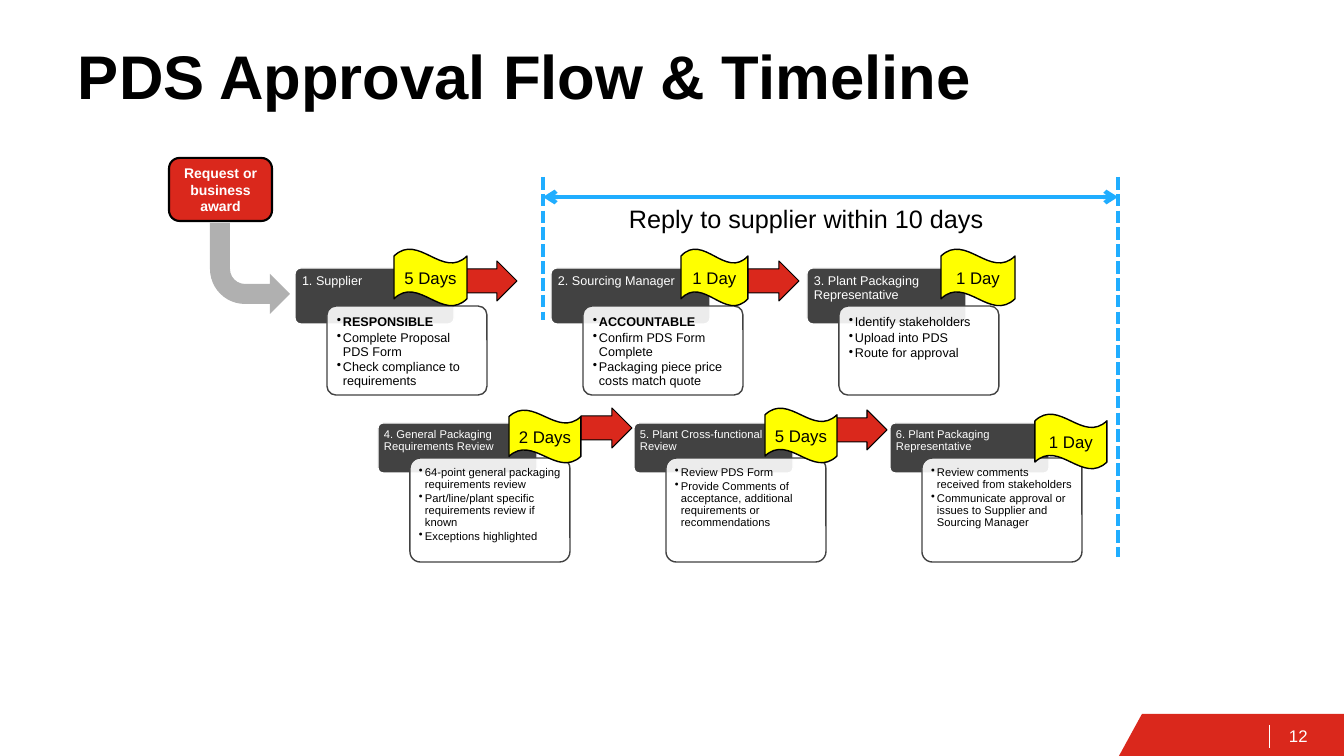
from lxml import etree
from pptx import Presentation
from pptx.dml.color import RGBColor
from pptx.enum.dml import MSO_LINE
from pptx.enum.shapes import MSO_CONNECTOR, MSO_SHAPE as SHAPE
from pptx.enum.text import MSO_ANCHOR as ANCHOR, PP_ALIGN as ALIGN
from pptx.oxml.ns import qn
from pptx.util import Pt

# Content: each row holds its steps as (heading, bullets)
TITLE = "PDS Approval Flow & Timeline"
START = "Request or business award"
SPAN_LABEL = "Reply to supplier within 10 days"
PAGE_NUMBER = "12"
ROWS = [
    dict(left=295, top=268, head=56, body_top=306, body=89, size=9, inset=7, steps=[
        ("1. Supplier", ["RESPONSIBLE", "Complete Proposal PDS Form",
                         "Check compliance to requirements"]),
        ("2. Sourcing Manager", ["ACCOUNTABLE", "Confirm PDS Form Complete",
                                 "Packaging piece price costs match quote"]),
        ("3. Plant Packaging Representative", ["Identify stakeholders", "Upload into PDS",
                                               "Route for approval"]),
    ]),
    dict(left=378, top=423, head=50, body_top=458, body=104, size=8, inset=6, steps=[
        ("4. General Packaging Requirements Review",
         ["64-point general packaging requirements review",
          "Part/line/plant specific requirements review if known",
          "Exceptions highlighted"]),
        ("5. Plant Cross-functional Review",
         ["Review PDS Form",
          "Provide Comments of acceptance, additional requirements or recommendations"]),
        ("6. Plant Packaging Representative",
         ["Review comments received from stakeholders",
          "Communicate approval or issues to Supplier and Sourcing Manager"]),
    ]),
]
BOLD_ROLES = {"RESPONSIBLE", "ACCOUNTABLE"}
DURATIONS = [  # label, left, top, width, height
    ("5 Days", 394, 249, 73, 57), ("1 Day", 681, 249, 67, 57), ("1 Day", 941, 249, 74, 57),
    ("2 Days", 509, 410, 72, 53), ("5 Days", 765, 408, 72, 55), ("1 Day", 1035, 414, 72, 55),
]
ARROWS = [(466, 261), (748, 261), (581, 408), (836, 410)]

# Layout, in px
PX = 9071.43
PITCH, CARD_WIDTH, BODY_SHIFT = 256, 159, 32
SPAN_LEFT, SPAN_RIGHT, SPAN_TOP, SPAN_LINE = 543, 1118, 177, 197
FONT = "Arial"
COLORS = {key: RGBColor.from_string(value) for key, value in {
    "red": "DA281C", "dark": "424242", "white": "FFFFFF", "black": "000000",
    "yellow": "FFFF00", "blue": "20ADFF", "grey": "B0B0B0"}.items()}


def emu(*lengths):
    return [round(length * PX) for length in lengths]


def add_run(para, text, size, color="black", bold=False):
    span = para.add_run()
    span.text = text
    span.font.name, span.font.size, span.font.bold = FONT, Pt(size), bold
    span.font.color.rgb = COLORS[color]


def set_frame(frame, inset, anchor=ANCHOR.TOP, wrap=True):
    frame.word_wrap, frame.vertical_anchor = wrap, anchor
    frame.margin_left, frame.margin_top, frame.margin_right, frame.margin_bottom = emu(*inset)
    return frame


def add_text(page, place, inset, anchor=ANCHOR.TOP):
    box = page.shapes.add_textbox(*emu(*place))
    return set_frame(box.text_frame, inset, anchor)


def paint(shape, fill, line=None, weight=1):
    shape.shadow.inherit = False
    shape.fill.solid()
    shape.fill.fore_color.rgb = COLORS[fill]
    if line:
        shape.line.color.rgb, shape.line.width = COLORS[line], Pt(weight)
    else:
        shape.line.fill.background()
    return shape


def add_shape(page, kind, place, fill, line=None, weight=1):
    return paint(page.shapes.add_shape(kind, *emu(*place)), fill, line, weight)


def add_centred(shape, text, size, color="black", bold=False, wrap=True):
    frame = set_frame(shape.text_frame, [10] * 4, ANCHOR.MIDDLE, wrap)
    para = frame.paragraphs[0]
    para.alignment = ALIGN.CENTER
    add_run(para, text, size, color, bold)


def add_line(page, ends, color, weight, dashed=False, arrows=False):
    line = page.shapes.add_connector(MSO_CONNECTOR.STRAIGHT, *emu(*ends))
    line.line.color.rgb, line.line.width = COLORS[color], Pt(weight)
    if dashed:
        line.line.dash_style = MSO_LINE.SQUARE_DOT
    if arrows:
        for end in ("a:headEnd", "a:tailEnd"):
            etree.SubElement(line.line._get_or_add_ln(), qn(end), type="arrow")
    etree.SubElement(line._element.spPr, qn("a:effectLst"))


def add_bullet(para, indent):
    props = para._p.get_or_add_pPr()
    props.set("marL", str(indent))
    props.set("indent", str(-indent))
    etree.SubElement(props, qn("a:buChar"), char="•")


def add_step(page, row, left, heading, bullets):
    size, inset = row["size"], row["inset"]
    # Heading bar
    bar = add_shape(page, SHAPE.ROUNDED_RECTANGLE,
                    (left, row["top"], CARD_WIDTH, row["head"]), "dark", "white")
    bar.adjustments[0] = 0.1
    frame = add_text(page, (left, row["top"], CARD_WIDTH, row["body_top"] - row["top"]),
                     (inset, inset, inset, inset // 2))
    frame.paragraphs[0].line_spacing = 0.9
    add_run(frame.paragraphs[0], heading, size, "white")
    # Translucent card with bullets
    left += BODY_SHIFT
    card = add_shape(page, SHAPE.ROUNDED_RECTANGLE,
                     (left, row["body_top"], CARD_WIDTH + 1, row["body"]), "white", "dark")
    card.adjustments[0] = 0.1
    tint = card._element.spPr.find(qn("a:solidFill"))[0]
    etree.SubElement(tint, qn("a:alpha"), val="90000")
    frame = add_text(page, (left + 3, row["body_top"] + 3, CARD_WIDTH - 5, row["body"] - 6),
                     [inset] * 4)
    for index, text in enumerate(bullets):
        para = frame.add_paragraph() if index else frame.paragraphs[0]
        add_bullet(para, *emu(6))
        para.line_spacing, para.space_after = 0.9, Pt(size * 0.15)
        add_run(para, text, size, bold=text in BOLD_ROLES)


def main():
    deck = Presentation()
    deck.slide_width, deck.slide_height = emu(1344, 756)
    page = deck.slides.add_slide(deck.slide_layouts[5])

    # Title
    title = page.shapes.title
    title.left, title.top, title.width, title.height = emu(68, 40, 1184, 146)
    para = set_frame(title.text_frame, (10, 5, 10, 5)).paragraphs[0]
    para.alignment, para.line_spacing = ALIGN.LEFT, Pt(48)
    add_run(para, TITLE, 44, bold=True)

    # Footer corner and page number
    corner = page.shapes.build_freeform(1119, 756, scale=PX)
    corner.add_line_segments([(1142, 714), (1344, 714), (1344, 756)])
    paint(corner.convert_to_shape(), "red")
    frame = add_text(page, (1276, 716, 68, 40), (13, 7, 13, 7), ANCHOR.MIDDLE)
    add_run(frame.paragraphs[0], PAGE_NUMBER, 12, "white")
    add_line(page, (1270, 725, 1270, 748), "white", 0.75)

    # Steps and the arrows between them
    for row in ROWS:
        for column, (heading, bullets) in enumerate(row["steps"]):
            add_step(page, row, row["left"] + column * PITCH, heading, bullets)
    for left, top in ARROWS:
        arrow = add_shape(page, SHAPE.RIGHT_ARROW, (left, top, 51, 40), "red", "black", 0.75)
        arrow.adjustments[0] = 0.6

    # Reply span
    for x, bottom in ((SPAN_LEFT, 320), (SPAN_RIGHT, 557)):
        add_line(page, (x, SPAN_TOP, x, bottom), "blue", 3, dashed=True)
    add_line(page, (SPAN_LEFT, SPAN_LINE, SPAN_RIGHT, SPAN_LINE), "blue", 3, arrows=True)
    frame = add_text(page, (619, 198, 389, 40), (10, 5, 10, 5))
    add_run(frame.paragraphs[0], SPAN_LABEL, 18)

    # Duration flags
    for label, *place in DURATIONS:
        flag = add_shape(page, SHAPE.WAVE, place, "yellow", "black")
        add_centred(flag, label, 12, wrap=False)

    # Starting point
    bend = add_shape(page, SHAPE.BENT_ARROW, (210, 223, 80, 91), "grey")
    bend._element.spPr.find(qn("a:xfrm")).set("flipV", "1")
    start = add_shape(page, SHAPE.ROUNDED_RECTANGLE, (169, 158, 103, 63), "red", "black", 1.5)
    add_centred(start, START, 10, "white", bold=True)

    deck.save("out.pptx")


if __name__ == "__main__":
    main()
